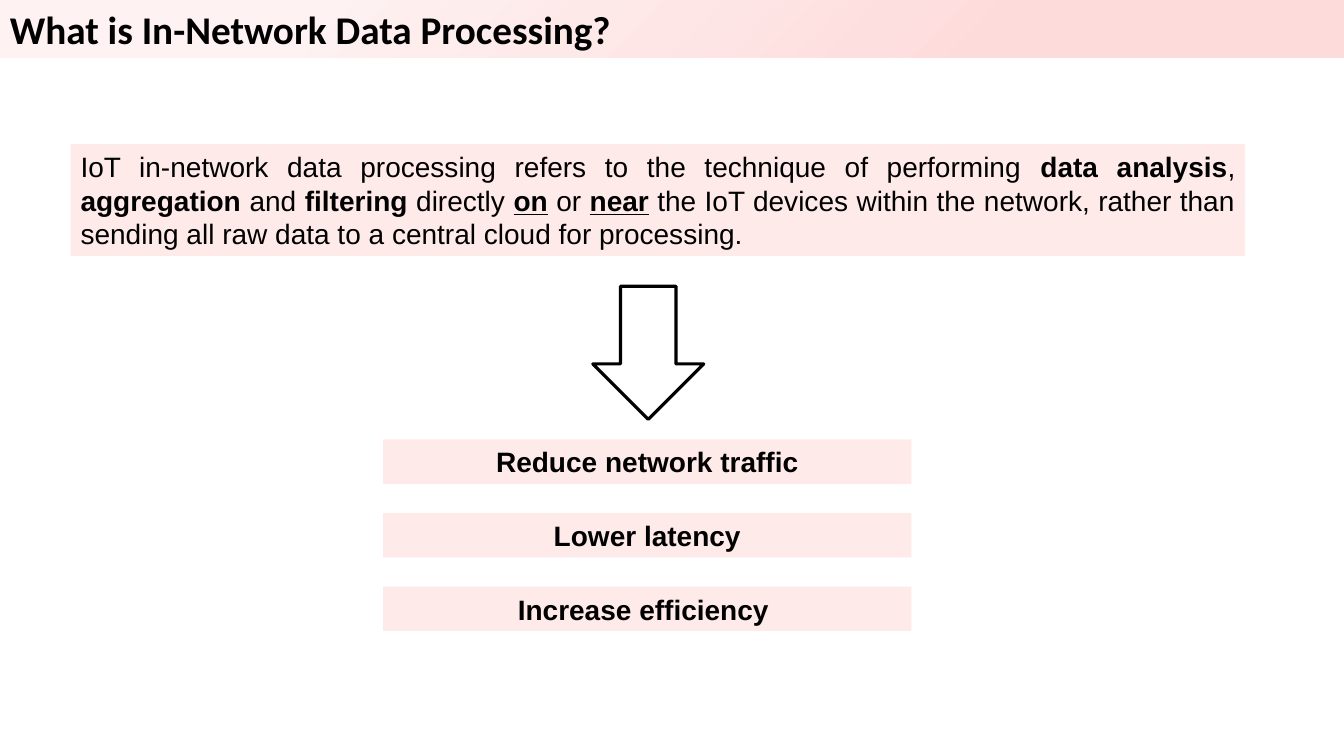
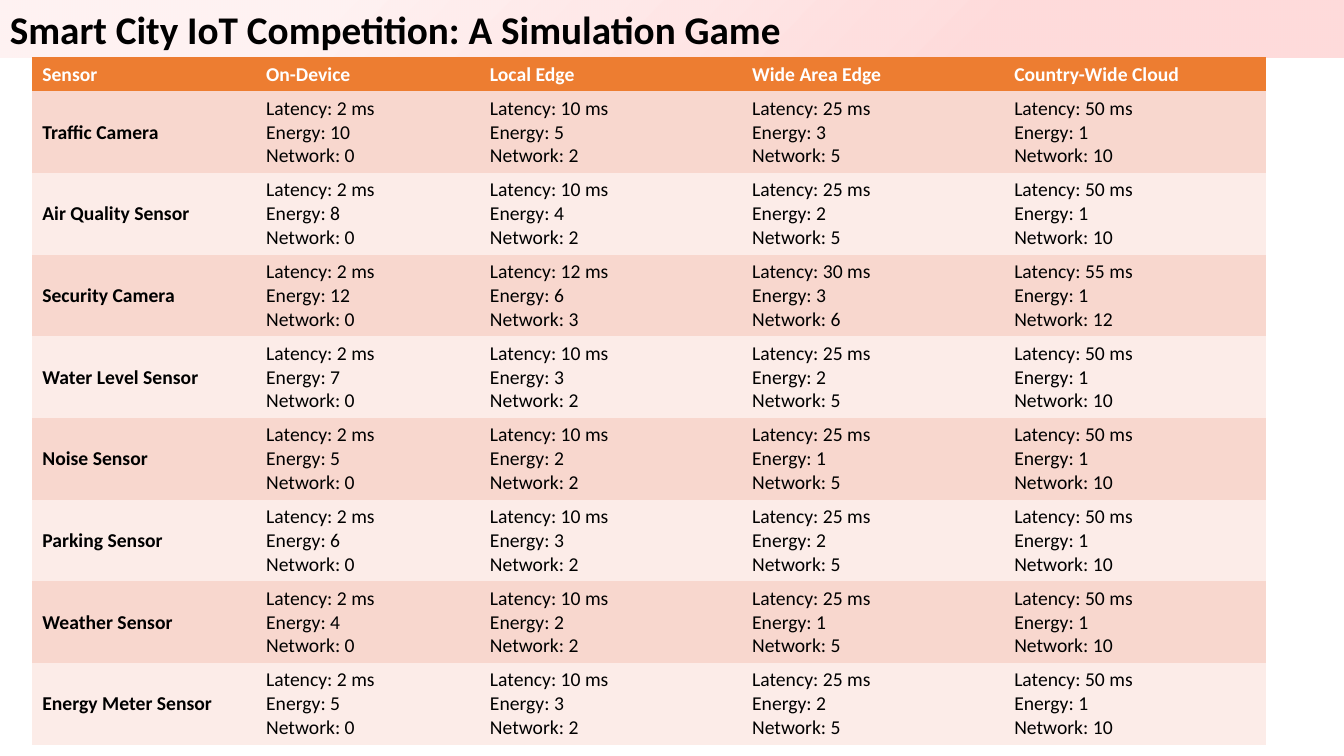
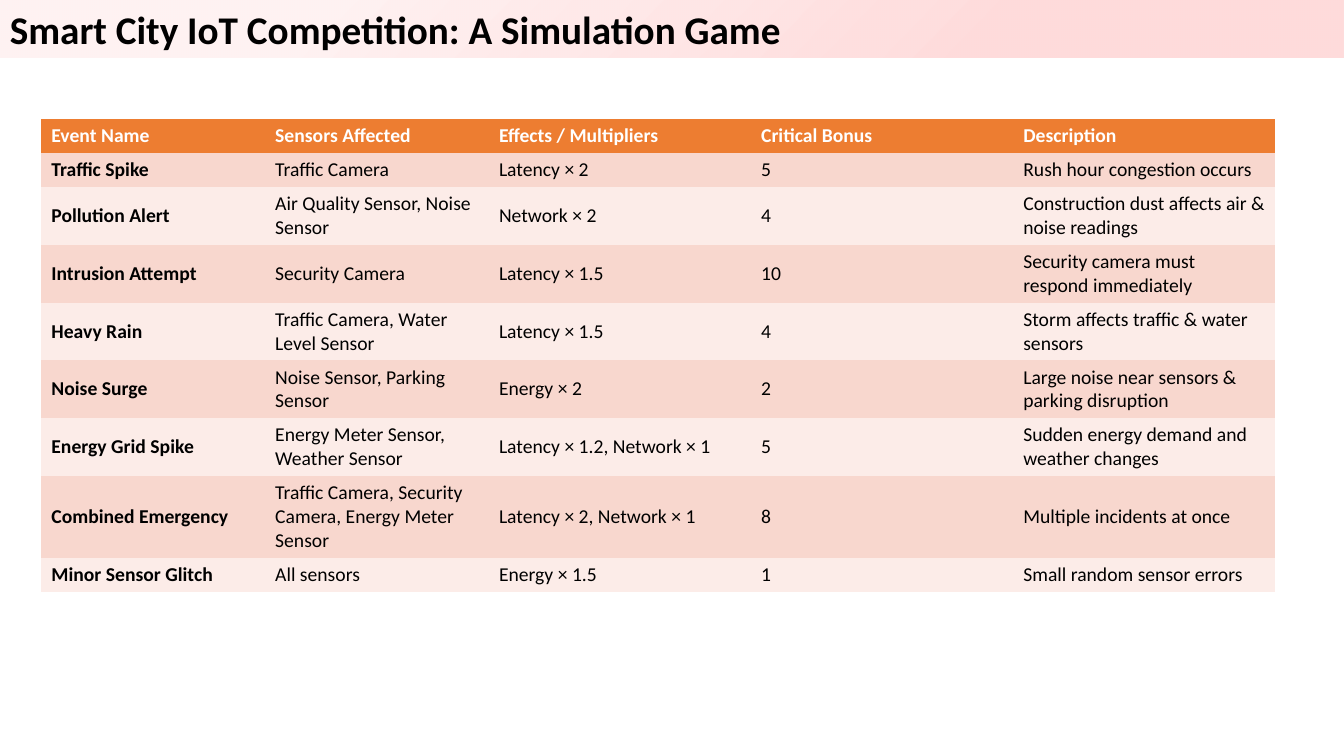
"""Build three slides on in-network data processing for IoT."""
from dataclasses import dataclass
from typing import NamedTuple, Sequence

import pptx
import pptx.dml.color
import pptx.enum.shapes
import pptx.enum.text
import pptx.oxml
import pptx.oxml.ns
import pptx.util

Inches = pptx.util.Inches
Pt = pptx.util.Pt
ALIGN = pptx.enum.text.PP_ALIGN
ANCHOR = pptx.enum.text.MSO_ANCHOR
SHAPE = pptx.enum.shapes.MSO_SHAPE

BLACK = "000000"
WHITE = "FFFFFF"
PINK = "FFEAEA"
HEADER_FILL = "ED7D31"
BAND_FILLS = ("F8D7CE", "FCECE8")
PLAIN_TABLE_STYLE = "{2D5ABB26-0587-4C30-8999-92F81FD0307C}"
SLIDE_W, SLIDE_H = 13.33, 7.5
BAND_H = 0.57
COLUMN_WIDTHS = (2.22, 2.22, 2.6, 2.6, 2.6)
LINE_H, CELL_PADDING = 0.23, 0.1

BAND_GRADIENT = (
    f'<a:gradFill {pptx.oxml.ns.nsdecls("a")} rotWithShape="1"><a:gsLst>'
    '<a:gs pos="26000"><a:srgbClr val="FF0000"><a:alpha val="14000"/></a:srgbClr></a:gs>'
    '<a:gs pos="76000"><a:srgbClr val="FF0000"><a:alpha val="5000"/></a:srgbClr></a:gs>'
    '</a:gsLst><a:path path="circle"><a:fillToRect l="100000" t="100000"/></a:path>'
    '</a:gradFill>'
)


class Span(NamedTuple):
    text: str
    bold: bool = False
    underline: bool = False


class Box(NamedTuple):
    left: float
    top: float
    width: float
    height: float

    def lengths(self) -> list:
        return [Inches(v) for v in self]


@dataclass(frozen=True)
class Sensor:
    name: str
    energy: tuple
    latency: tuple = (2, 10, 25, 50)
    network: tuple = (0, 2, 5, 10)

    def cells(self) -> list:
        levels = zip(self.latency, self.energy, self.network)
        return [self.name] + [
            f"Latency: {ms} ms\nEnergy: {energy}\nNetwork: {network}"
            for ms, energy, network in levels
        ]


class Event(NamedTuple):
    name: str
    sensors: str
    effects: str
    bonus: str
    description: str


DEFINITION = [
    Span("IoT in-network data processing refers to the technique of performing "),
    Span("data analysis", bold=True),
    Span(", "),
    Span("aggregation ", bold=True),
    Span("and "),
    Span("filtering", bold=True),
    Span(" directly "),
    Span("on", bold=True, underline=True),
    Span(" or "),
    Span("near", bold=True, underline=True),
    Span(" the IoT devices within the network, rather than sending all raw data "
         "to a central cloud for processing."),
]
BENEFITS = ("Reduce network traffic", "Lower latency", "Increase efficiency ")

GAME_TITLE = "Smart City IoT Competition: A Simulation Game"
SENSOR_HEADER = ("Sensor", "On-Device", "Local Edge", "Wide Area Edge", "Country-Wide Cloud")
SENSORS = (
    Sensor("Traffic Camera", (10, 5, 3, 1)),
    Sensor("Air Quality Sensor", (8, 4, 2, 1)),
    Sensor("Security Camera", (12, 6, 3, 1), (2, 12, 30, 55), (0, 3, 6, 12)),
    Sensor("Water Level Sensor", (7, 3, 2, 1)),
    Sensor("Noise Sensor", (5, 2, 1, 1)),
    Sensor("Parking Sensor", (6, 3, 2, 1)),
    Sensor("Weather Sensor", (4, 2, 1, 1)),
    Sensor("Energy Meter Sensor", (5, 3, 2, 1)),
)
EVENT_HEADER = ("Event Name", "Sensors Affected", "Effects / Multipliers",
                "Critical Bonus", "Description")
EVENTS = (
    Event("Traffic Spike", "Traffic Camera", "Latency × 2", "5",
          "Rush hour congestion occurs"),
    Event("Pollution Alert", "Air Quality Sensor, Noise Sensor", "Network × 2", "4",
          "Construction dust affects air & noise readings"),
    Event("Intrusion Attempt", "Security Camera", "Latency × 1.5", "10",
          "Security camera must respond immediately"),
    Event("Heavy Rain", "Traffic Camera, Water Level Sensor", "Latency × 1.5", "4",
          "Storm affects traffic & water sensors"),
    Event("Noise Surge", "Noise Sensor, Parking Sensor", "Energy × 2", "2",
          "Large noise near sensors & parking disruption"),
    Event("Energy Grid Spike", "Energy Meter Sensor, Weather Sensor",
          "Latency × 1.2, Network × 1", "5", "Sudden energy demand and weather changes"),
    Event("Combined Emergency", "Traffic Camera, Security Camera, Energy Meter Sensor",
          "Latency × 2, Network × 1", "8", "Multiple incidents at once"),
    Event("Minor Sensor Glitch", "All sensors", "Energy × 1.5", "1",
          "Small random sensor errors"),
)
EVENT_LINES = (1, 1, 2, 2, 2, 2, 2, 3, 1)


def rgb(color: str) -> pptx.dml.color.RGBColor:
    return pptx.dml.color.RGBColor.from_string(color)


def paint(fill, color: str) -> None:
    fill.solid()
    fill.fore_color.rgb = rgb(color)


def write(tf, text: str | Sequence[Span], *, size: float, font: str, color: str = BLACK,
          bold: bool = False, align=ALIGN.LEFT) -> None:
    if isinstance(text, str):
        paragraphs = [[Span(line, bold)] for line in text.split("\n")]
    else:
        paragraphs = [text]
    for i, spans in enumerate(paragraphs):
        p = tf.add_paragraph() if i else tf.paragraphs[0]
        p.alignment = align
        for span in spans:
            r = p.add_run()
            r.text = span.text
            r.font.size = Pt(size)
            r.font.name = font
            r.font.color.rgb = rgb(color)
            r.font.bold = span.bold
            r.font.underline = span.underline


def add_box(slide, box: Box, *, fill: str | None = None, kind=SHAPE.RECTANGLE,
            line: str | None = None, anchor=ANCHOR.MIDDLE):
    sp = slide.shapes.add_shape(kind, *box.lengths())
    sp.shadow.inherit = False
    if fill:
        paint(sp.fill, fill)
    else:
        sp.fill.background()
    if line:
        sp.line.color.rgb = rgb(line)
        sp.line.width = Pt(2.25)
    else:
        sp.line.fill.background()
    sp.text_frame.word_wrap = True
    sp.text_frame.vertical_anchor = anchor
    return sp


def add_titled_slide(prs, title: str):
    slide = prs.slides.add_slide(prs.slide_layouts[6])
    sp = add_box(slide, Box(0, 0, SLIDE_W, BAND_H), anchor=ANCHOR.TOP)
    props = sp._element.spPr
    props.replace(props.find(pptx.oxml.ns.qn("a:noFill")), pptx.oxml.parse_xml(BAND_GRADIENT))
    write(sp.text_frame, title, size=28, font="Calibri", bold=True)
    return slide


def add_banded_table(slide, left: float, top: float, rows: Sequence[Sequence[str]],
                     line_counts: Sequence[int]) -> None:
    heights = [CELL_PADDING + LINE_H * n for n in line_counts]
    box = Box(left, top, sum(COLUMN_WIDTHS), sum(heights))
    frame = slide.shapes.add_table(len(rows), len(COLUMN_WIDTHS), *box.lengths())
    table = frame.table
    table._tbl.tblPr.find(pptx.oxml.ns.qn("a:tableStyleId")).text = PLAIN_TABLE_STYLE
    table.horz_banding = False
    for column, width in zip(table.columns, COLUMN_WIDTHS):
        column.width = Inches(width)
    for i, (row, height) in enumerate(zip(rows, heights)):
        table.rows[i].height = Inches(height)
        for j, text in enumerate(row):
            cell = table.cell(i, j)
            cell.vertical_anchor = ANCHOR.MIDDLE
            paint(cell.fill, BAND_FILLS[(i - 1) % 2] if i else HEADER_FILL)
            write(cell.text_frame, text, size=14, font="Calibri",
                  color=BLACK if i else WHITE, bold=i == 0 or j == 0)


def build_definition(prs) -> None:
    slide = add_titled_slide(prs, "What is In-Network Data Processing?")
    sp = add_box(slide, Box(0.7, 1.43, 11.65, 1.11), fill=PINK)
    write(sp.text_frame, DEFINITION, size=20, font="Arial", align=ALIGN.JUSTIFY)
    for i, benefit in enumerate(BENEFITS):
        sp = add_box(slide, Box(3.8, 4.36 + 0.73 * i, 5.24, 0.44), fill=PINK)
        write(sp.text_frame, benefit, size=20, font="Arial", bold=True, align=ALIGN.CENTER)
    add_box(slide, Box(5.88, 2.84, 1.1, 1.32), kind=SHAPE.DOWN_ARROW, line=BLACK)


def build_sensors(prs) -> None:
    slide = add_titled_slide(prs, GAME_TITLE)
    rows = [SENSOR_HEADER] + [sensor.cells() for sensor in SENSORS]
    add_banded_table(slide, 0.32, BAND_H, rows, [1] + [3] * len(SENSORS))


def build_events(prs) -> None:
    slide = add_titled_slide(prs, GAME_TITLE)
    add_banded_table(slide, 0.41, 1.18, [EVENT_HEADER, *EVENTS], EVENT_LINES)


def main() -> None:
    prs = pptx.Presentation()
    prs.slide_width = Inches(SLIDE_W)
    prs.slide_height = Inches(SLIDE_H)
    build_definition(prs)
    build_sensors(prs)
    build_events(prs)
    prs.save("out.pptx")


if __name__ == "__main__":
    main()
